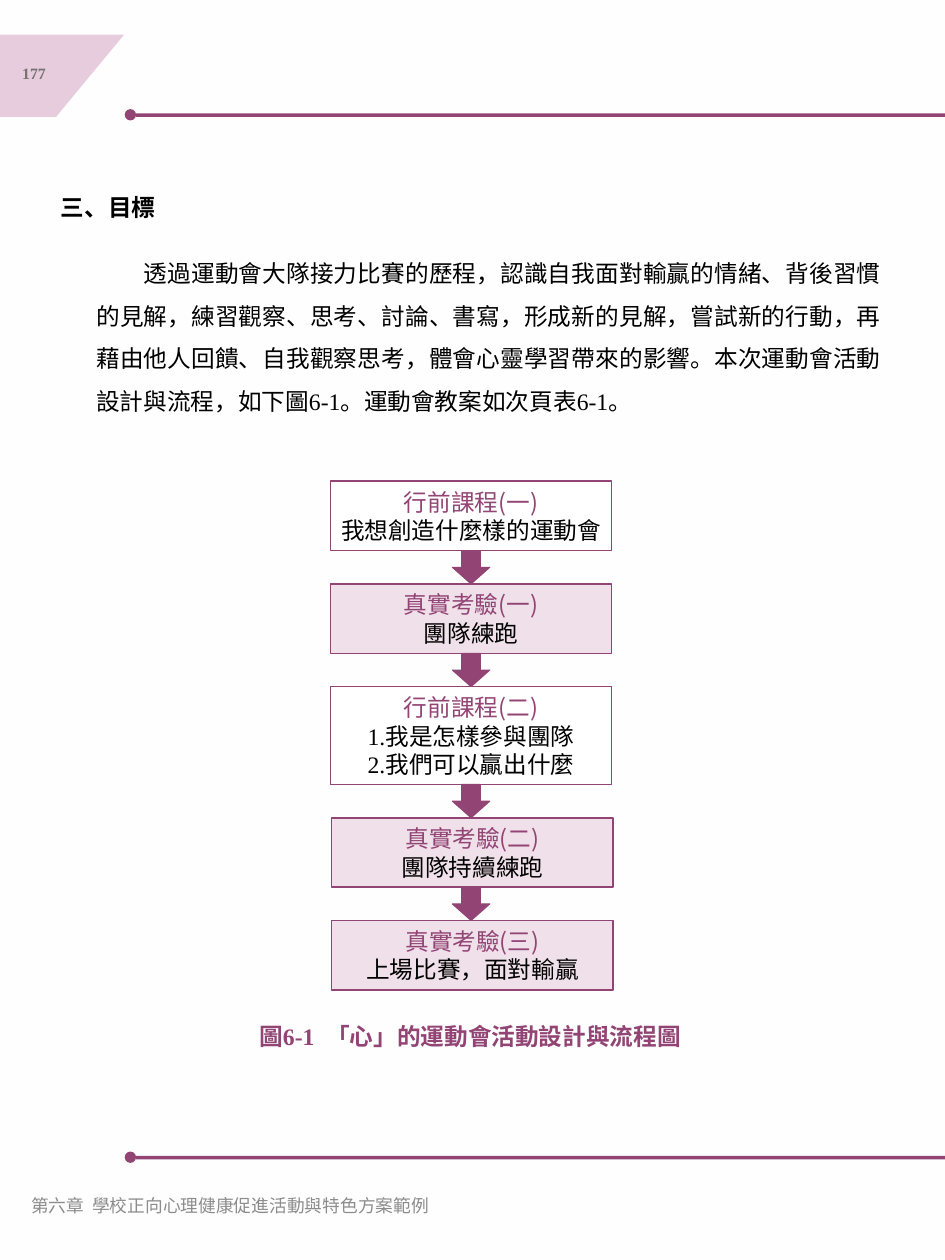
import pptx
import pptx.util
import pptx.dml.color
import pptx.enum.shapes
import pptx.enum.text
import pptx.oxml.ns
import lxml.etree

Inches = pptx.util.Inches
Pt = pptx.util.Pt
SHAPE = pptx.enum.shapes.MSO_SHAPE
ALIGN = pptx.enum.text.PP_ALIGN
ANCHOR = pptx.enum.text.MSO_ANCHOR

LATIN, CJK = "Times New Roman", "Noto Sans CJK SC"
COLORS = {"paper": "FEFEFE", "plum": "924474", "tab": "E7CCDD", "pink": "F0E0EA",
          "white": "FFFFFF", "black": "000000", "number": "767171", "footer": "8C8C8C"}

# Left edge, height, fill, heading, detail lines
STEPS = [
    (4.66, 0.98, "white", "行前課程(一)", ["我想創造什麼樣的運動會"]),
    (4.66, 0.98, "pink", "真實考驗(一)", ["團隊練跑"]),
    (4.66, 1.38, "white", "行前課程(二)", ["1.我是怎樣參與團隊", "2.我們可以贏出什麼"]),
    (4.68, 0.98, "pink", "真實考驗(二)", ["團隊持續練跑"]),
    (4.68, 0.98, "pink", "真實考驗(三)", ["上場比賽，面對輸贏"]),
]
STEP_TOP, STEP_WIDTH = 6.79, 3.97
ARROW_LEFT, ARROW_WIDTH, ARROW_HEIGHT = 6.38, 0.53, 0.47

GOAL = ("透過運動會大隊接力比賽的歷程，認識自我面對輸贏的情緒、背後習慣的見解，"
        "練習觀察、思考、討論、書寫，形成新的見解，嘗試新的行動，再藉由他人回饋、"
        "自我觀察思考，體會心靈學習帶來的影響。本次運動會活動設計與流程，如下圖6-1。"
        "運動會教案如次頁表6-1。")


def rgb(name):
    return pptx.dml.color.RGBColor.from_string(COLORS[name])


def apply(obj, values):
    for name, value in values.items():
        setattr(obj, name, value)


def style_shape(sp, fill, line_width=None):
    sp.shadow.inherit = False
    sp.fill.solid()
    sp.fill.fore_color.rgb = rgb(fill)
    if line_width is None:
        sp.line.fill.background()
    else:
        sp.line.color.rgb = rgb("plum")
        sp.line.width = Pt(line_width)


def add_shape(s, kind, box, fill, line_width=None):
    sp = s.shapes.add_shape(kind, *map(Inches, box))
    style_shape(sp, fill, line_width)
    return sp


def write_paragraphs(tf, lines, **format_values):
    """Each line is (text, font values, colour name)."""
    for i, (text, font_values, color) in enumerate(lines):
        p = tf.paragraphs[0] if i == 0 else tf.add_paragraph()
        apply(p, format_values)
        r = p.add_run()
        r.text = text
        apply(r.font, {"name": LATIN, "size": Pt(24), **font_values})
        r.font.color.rgb = rgb(color)
        ea = lxml.etree.SubElement(r.font._element, pptx.oxml.ns.qn("a:ea"))
        ea.set("typeface", CJK)
        r.font._element.find(pptx.oxml.ns.qn("a:latin")).addnext(ea)


def add_text(s, box, lines, anchor=ANCHOR.TOP, **format_values):
    tf = s.shapes.add_textbox(*map(Inches, box)).text_frame
    apply(tf, {"word_wrap": True, "vertical_anchor": anchor})
    write_paragraphs(tf, lines, **format_values)
    return tf


def add_rule(s, top):
    add_shape(s, SHAPE.RECTANGLE, (1.92, top, 11.42, 0.05), "plum")
    add_shape(s, SHAPE.OVAL, (1.76, top - 0.06, 0.16, 0.16), "plum")


def add_page_tab(s):
    builder = s.shapes.build_freeform(0, Inches(0.49))
    corners = [(1.75, 0.49), (0.79, 1.65), (0, 1.65)]
    builder.add_line_segments([(Inches(x), Inches(y)) for x, y in corners], close=True)
    style_shape(builder.convert_to_shape(), "tab")
    add_text(s, (0.09, 0.64, 0.78, 0.8),
             [("177", {"size": Pt(16), "bold": True}, "number")],
             ANCHOR.MIDDLE, alignment=ALIGN.CENTER)


def add_goal(s):
    tf = add_text(s, (0.76, 2.47, 11.77, 3.39),
                  [("三、目標", {"bold": True}, "black"), (GOAL, {}, "black")],
                  alignment=ALIGN.JUSTIFY, line_spacing=1.5)
    body = tf.paragraphs[1]
    body.space_before = Pt(24)
    pPr = body._p.get_or_add_pPr()
    pPr.set("marL", str(Inches(0.5)))
    pPr.set("indent", str(Inches(0.67)))  # two characters


def add_step(s, box, fill, heading, details):
    tf = add_shape(s, SHAPE.RECTANGLE, box, fill, 1.5).text_frame
    apply(tf, {"word_wrap": True, "vertical_anchor": ANCHOR.MIDDLE})
    lines = [(heading, {"name": CJK}, "plum")]
    lines += [(detail, {}, "black") for detail in details]
    write_paragraphs(tf, lines, alignment=ALIGN.CENTER)


def add_flow(s):
    top = STEP_TOP
    for i, (left, height, fill, heading, details) in enumerate(STEPS):
        if i > 0:
            add_shape(s, SHAPE.DOWN_ARROW,
                      (ARROW_LEFT, top, ARROW_WIDTH, ARROW_HEIGHT), "plum", 1)
            top += ARROW_HEIGHT
        add_step(s, (left, top, STEP_WIDTH, height), fill, heading, details)
        top += height


def main():
    prs = pptx.Presentation()
    apply(prs, {"slide_width": Inches(13.33), "slide_height": Inches(17.78)})
    s = prs.slides.add_slide(prs.slide_layouts[6])
    s.background.fill.solid()
    s.background.fill.fore_color.rgb = rgb("paper")

    # Page frame
    for top in (1.6, 16.31):
        add_rule(s, top)
    add_page_tab(s)

    # Goal and flow chart
    add_goal(s)
    add_flow(s)

    # Caption and footer
    add_text(s, (3.56, 14.37, 6.21, 0.5),
             [("圖6-1  「心」的運動會活動設計與流程圖", {"bold": True}, "plum")])
    add_text(s, (0.34, 16.61, 5.98, 0.8),
             [("第六章  學校正向心理健康促進活動與特色方案範例", {"size": Pt(18)}, "footer")],
             ANCHOR.MIDDLE)
    prs.save("out.pptx")


if __name__ == "__main__":
    main()
